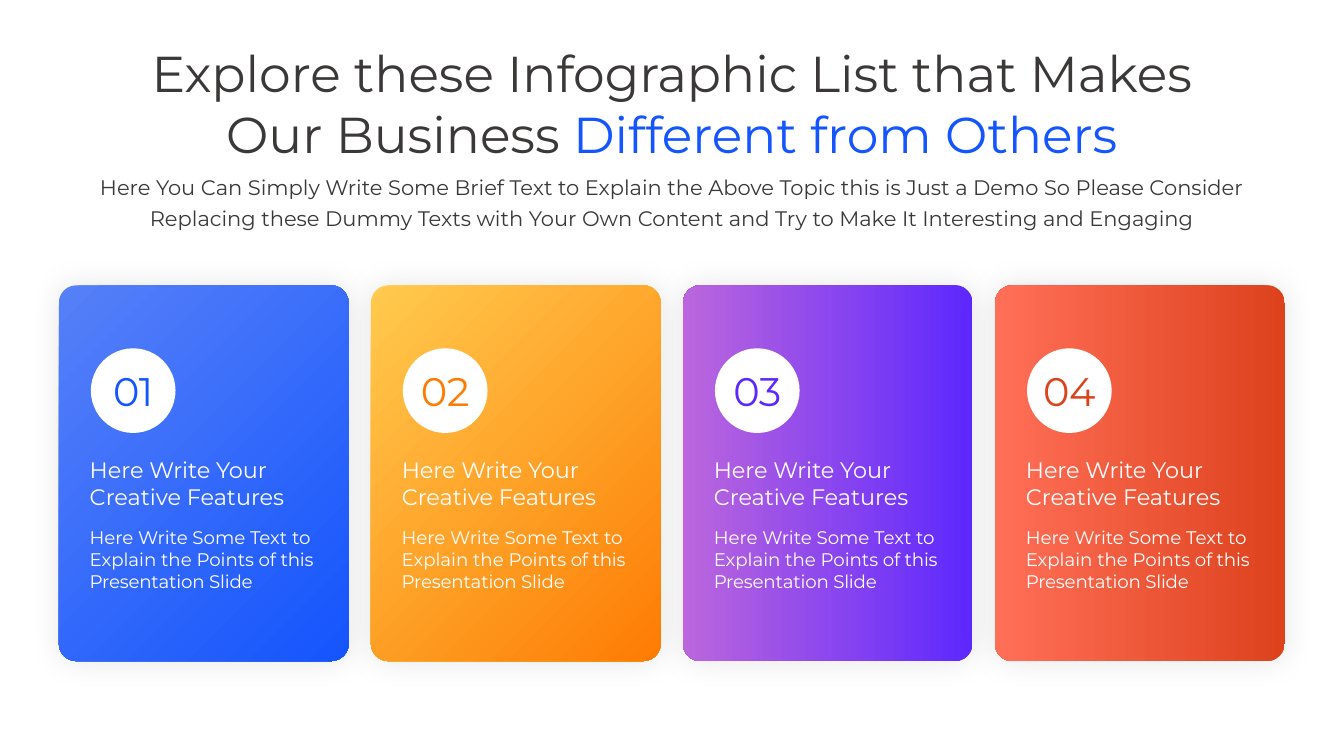
from dataclasses import dataclass

from lxml.etree import SubElement
from pptx import Presentation
from pptx.dml.color import RGBColor
from pptx.dml.fill import FillFormat
from pptx.enum.shapes import MSO_SHAPE
from pptx.enum.text import MSO_AUTO_SIZE, PP_ALIGN
from pptx.oxml.ns import qn
from pptx.slide import Slide
from pptx.util import Pt


@dataclass(frozen=True)
class Theme:
    font: str = "Montserrat"
    ink: str = "3B3838"
    white: str = "FFFFFF"
    shadow: str = "000000"
    title_size: float = 36
    intro_size: float = 15
    number_size: float = 28.5
    heading_size: float = 16
    body_size: float = 13


@dataclass(frozen=True)
class Gradient:
    dark: str
    light: str
    from_corner: bool = False

    def apply(self, fill: FillFormat, properties, from_corner: bool) -> None:
        """Blend dark to light, from the bottom right corner or the right side."""
        fill.gradient()
        fill.gradient_angle = 180
        for stop, colour in zip(fill.gradient_stops, (self.dark, self.light)):
            stop.color.rgb = RGBColor.from_string(colour)
        if from_corner:
            blend = properties.find(qn("a:gradFill"))
            blend.remove(blend.find(qn("a:lin")))
            corner = SubElement(blend, qn("a:path"), path="circle")
            SubElement(corner, qn("a:fillToRect"), l="100000", t="100000")


@dataclass(frozen=True)
class Span:
    text: str
    paint: str | Gradient
    spacing: float = 0


@dataclass(frozen=True)
class Box:
    left: float
    top: float
    width: float
    height: float

    def lengths(self) -> tuple[Pt, Pt, Pt, Pt]:
        return Pt(self.left), Pt(self.top), Pt(self.width), Pt(self.height)


@dataclass(frozen=True)
class Feature:
    number: str
    gradient: Gradient


THEME = Theme()
BLUE = Gradient("1555FD", "5680F8", from_corner=True)
FEATURES = [
    Feature("01", BLUE),
    Feature("02", Gradient("FE7C04", "FFCA4E", from_corner=True)),
    Feature("03", Gradient("5D28FE", "BB66DD")),
    Feature("04", Gradient("DD421D", "FF6F57")),
]
CARD_LEFT, CARD_TOP, CARD_PITCH = 42, 203.8, 222.9
CARD_WIDTH, CARD_HEIGHT = 207, 268.4
BADGE_SIZE, NUMBER_WIDTH = 60.5, 58


def add_text(slide: Slide, box: Box, lines: list[list[Span]], size: float,
             align: PP_ALIGN | None = None, line_spacing: float | None = None,
             text_from_corner: bool = False) -> None:
    frame = slide.shapes.add_textbox(*box.lengths()).text_frame
    frame.word_wrap = False
    frame.auto_size = MSO_AUTO_SIZE.SHAPE_TO_FIT_TEXT
    for index, spans in enumerate(lines):
        paragraph = frame.add_paragraph() if index else frame.paragraphs[0]
        paragraph.alignment = align
        if line_spacing:
            paragraph.line_spacing = Pt(line_spacing)
        for span in spans:
            run = paragraph.add_run()
            run.text = span.text
            run.font.name = THEME.font
            run.font.size = Pt(size)
            properties = run._r.get_or_add_rPr()
            if span.spacing:
                properties.set("spc", str(round(span.spacing * 100)))
            if isinstance(span.paint, Gradient):
                span.paint.apply(run.font.fill, properties, text_from_corner)
            else:
                run.font.color.rgb = RGBColor.from_string(span.paint)


def add_panel(slide: Slide, box: Box, gradient: Gradient) -> None:
    panel = slide.shapes.add_shape(MSO_SHAPE.ROUNDED_RECTANGLE, *box.lengths())
    panel.adjustments[0] = 0.06
    properties = panel._element.spPr
    gradient.apply(panel.fill, properties, gradient.from_corner)
    panel.line.fill.background()
    # Soft glow-like shadow around the card
    panel.shadow.inherit = False
    shadow = SubElement(properties.find(qn("a:effectLst")), qn("a:outerShdw"),
                        blurRad=str(Pt(22)), dist="0", dir="0",
                        algn="ctr", rotWithShape="0")
    colour = SubElement(shadow, qn("a:srgbClr"), val=THEME.shadow)
    SubElement(colour, qn("a:alpha"), val="10000")


def add_badge(slide: Slide, box: Box) -> None:
    badge = slide.shapes.add_shape(MSO_SHAPE.OVAL, *box.lengths())
    badge.shadow.inherit = False
    badge.fill.solid()
    badge.fill.fore_color.rgb = RGBColor.from_string(THEME.white)
    badge.line.fill.background()


def add_card(slide: Slide, left: float, feature: Feature) -> None:
    white = THEME.white
    add_panel(slide, Box(left, CARD_TOP, CARD_WIDTH, CARD_HEIGHT), feature.gradient)
    # Feature heading
    add_text(slide, Box(left + 15, 322.1, 167, 46.8),
             [[Span("Here Write Your", white)], [Span("Creative Features", white)]],
             THEME.heading_size)
    # Number centred in its badge
    badge_left = left + 22.9
    add_badge(slide, Box(badge_left, 248.8, BADGE_SIZE, BADGE_SIZE))
    number_left = badge_left + (BADGE_SIZE - NUMBER_WIDTH) / 2
    add_text(slide, Box(number_left, 258.1, NUMBER_WIDTH, 41.8),
             [[Span(feature.number, feature.gradient, -0.3)]],
             THEME.number_size, PP_ALIGN.CENTER, text_from_corner=True)
    # Explanation
    add_text(slide, Box(left + 15, 372.6, 177, 54.7),
             [[Span("Here Write Some Text to", white)],
              [Span("Explain the Points ", white), Span("of this", white, -0.1)],
              [Span("Presentation Slide", white, -0.1)]],
             THEME.body_size)


def main() -> None:
    deck = Presentation()
    deck.slide_width, deck.slide_height = Pt(960), Pt(540)
    slide = deck.slides.add_slide(deck.slide_layouts[6])

    # Title
    add_text(slide, Box(67.7, 26.9, 824.4, 94.5),
             [[Span("Explore these Infographic List that Makes", THEME.ink)],
              [Span("Our Business ", THEME.ink), Span("Different from Others", BLUE)]],
             THEME.title_size, PP_ALIGN.CENTER)
    # Introduction
    add_text(slide, Box(49, 117.4, 861.8, 49.7),
             [[Span("Here You Can Simply Write Some Brief Text to Explain the Above "
                    "Topic this is Just a Demo So Please Consider", THEME.ink)],
              [Span("Replacing these Dummy Texts with Your Own Content and Try to "
                    "Make It Interesting and Engaging", THEME.ink)]],
             THEME.intro_size, PP_ALIGN.CENTER, line_spacing=22)
    # Feature cards
    for index, feature in enumerate(FEATURES):
        add_card(slide, CARD_LEFT + index * CARD_PITCH, feature)

    deck.save("out.pptx")


if __name__ == "__main__":
    main()
